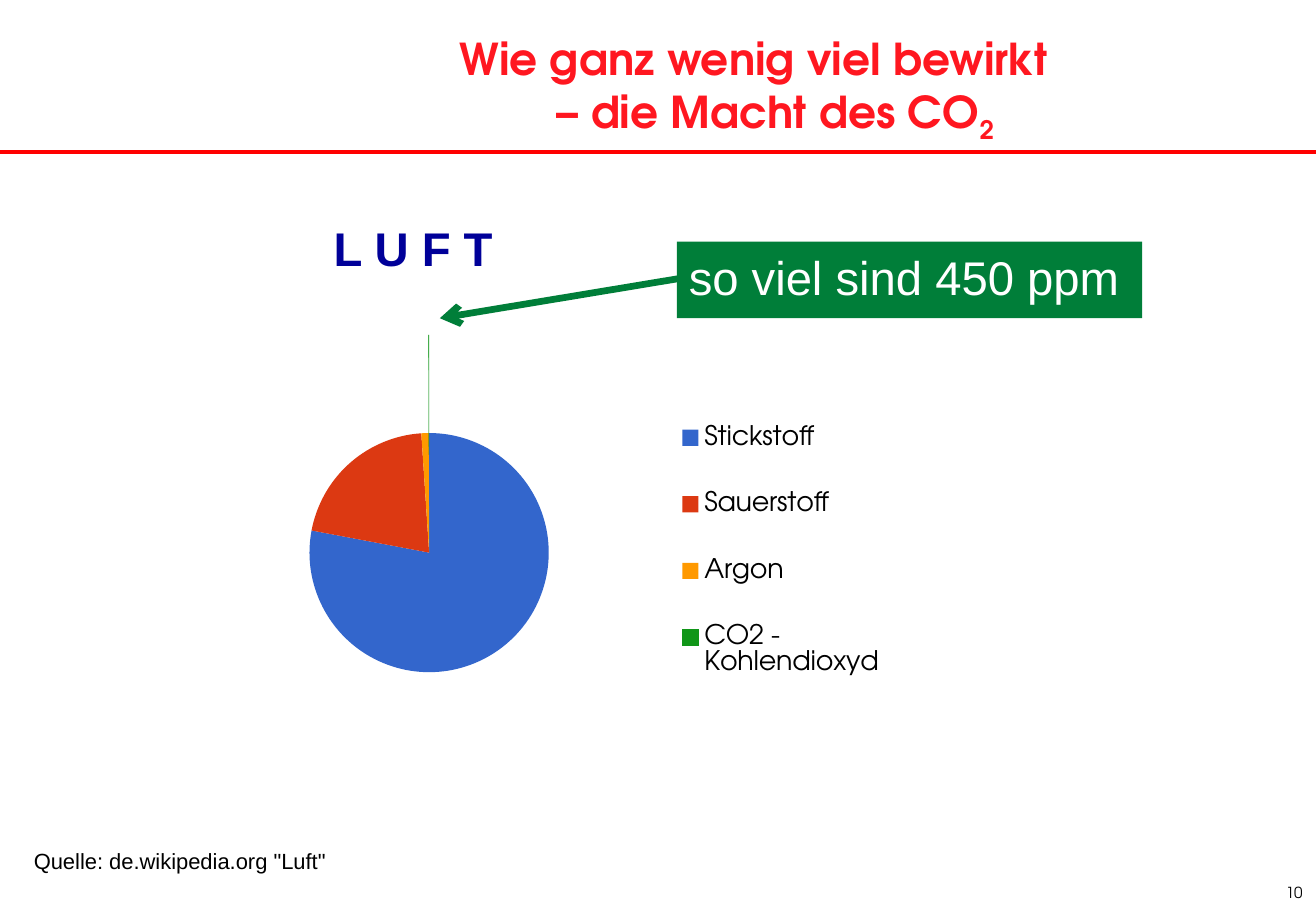
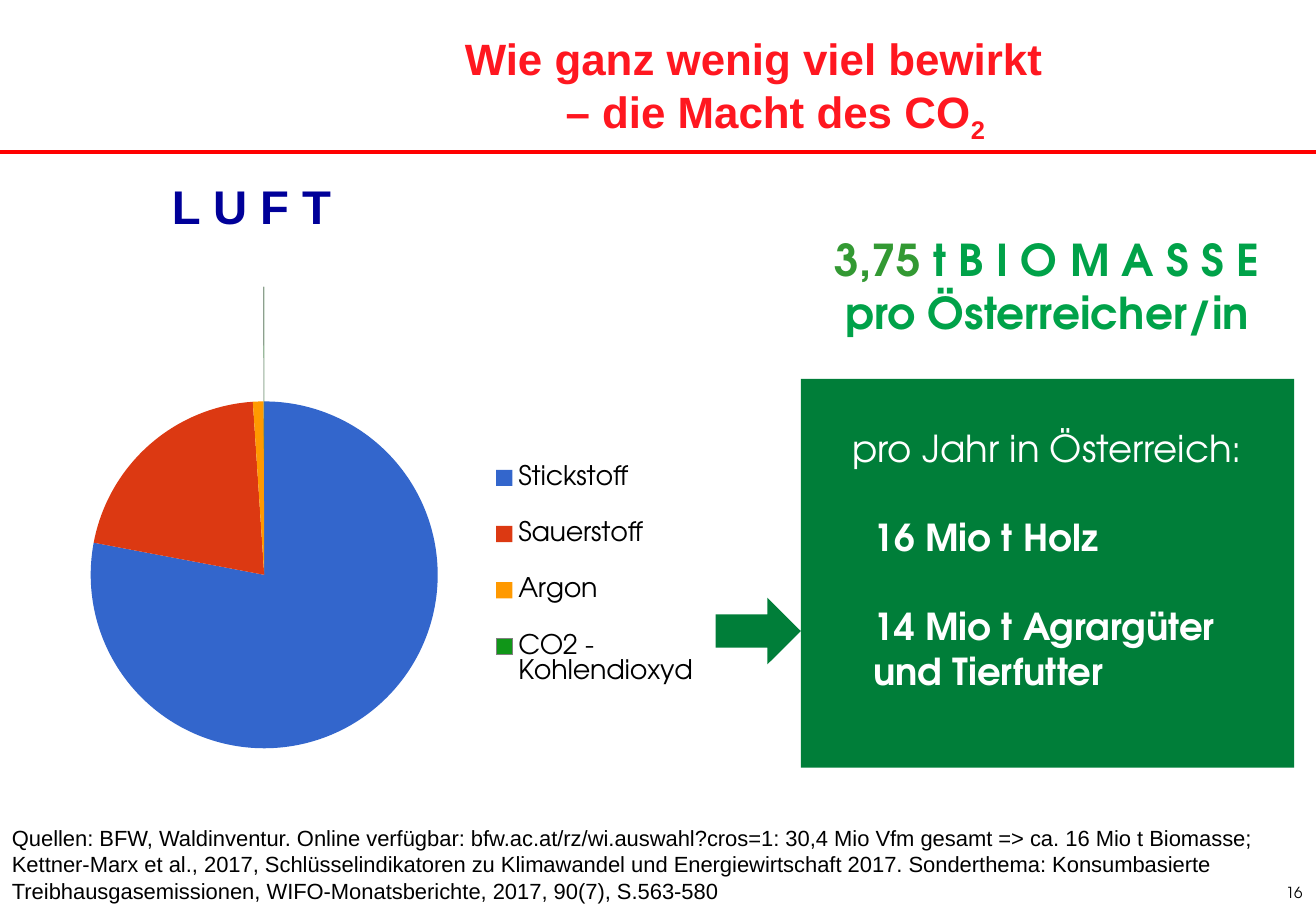
from lxml import etree
from pptx import Presentation
from pptx.chart.data import CategoryChartData
from pptx.dml.color import RGBColor
from pptx.enum.chart import XL_CHART_TYPE, XL_LEGEND_POSITION
from pptx.enum.shapes import MSO_CONNECTOR, MSO_SHAPE
from pptx.enum.text import MSO_ANCHOR, PP_ALIGN
from pptx.oxml import parse_xml
from pptx.oxml.ns import nsdecls, qn
from pptx.util import Inches, Pt

LEFT, CENTER, RIGHT = PP_ALIGN.LEFT, PP_ALIGN.CENTER, PP_ALIGN.RIGHT
TOP, MIDDLE = MSO_ANCHOR.TOP, MSO_ANCHOR.MIDDLE
RECT, RIGHT_ARROW = MSO_SHAPE.RECTANGLE, MSO_SHAPE.RIGHT_ARROW
STRAIGHT = MSO_CONNECTOR.STRAIGHT
PIE, LEGEND_RIGHT = XL_CHART_TYPE.PIE, XL_LEGEND_POSITION.RIGHT

ADVENTOR, ARIAL = "TeX Gyre Adventor", "Arial"
GREEN, RED, TITLE_RED, NAVY = "007E39", "FF0000", "FF1720", "000099"
BLACK, WHITE = "000000", "FFFFFF"
WIDTH, HEIGHT = 10.83, 7.5

TITLE = ["Wie ganz wenig viel bewirkt \v– die Macht des CO", "2"]
CO2_PPM = 450
PPM_PER_PERCENT = 10_000
AIR = [
    ("Stickstoff", 78, "3366CC"),
    ("Sauerstoff", 21, "DC3912"),
    ("Argon", 1, "FF9900"),
    ("CO2 - Kohlendioxyd", CO2_PPM / PPM_PER_PERCENT, "109618"),
]
SLIDES = [
    {
        "number": "10",
        "title_font": ADVENTOR,
        "heading_at": (2.53, 1.76, 1.74, 0.57),
        "pie": {"at": (1.33, 2.62, 6.25, 3.86), "explosion": 82, "tip": "109618",
                "legend": {"x": 0.67, "y": 0.14, "w": 0.29, "h": 0.71}},
        "source_at": (0.18, 6.93, 10.65, 0.32),
        "source": 'Quelle: de.wikipedia.org "Luft"',
    },
    {
        "number": "16",
        "title_font": ARIAL,
        "heading_at": (1.2, 1.41, 1.74, 0.57),
        "pie": {"at": (0, 2.34, 6.04, 3.86), "explosion": 66, "tip": "808080",
                "legend": {"x": 0.66, "y": 0.32, "w": 0.3, "h": 0.6},
                "plot": {"x": 0.12, "y": 0.25, "w": 0.48, "h": 0.74}},
        "source_at": (0, 6.74, 10.83, 0.77),
        "source": "Quellen: BFW, Waldinventur. Online verfügbar: "
                  "bfw.ac.at/rz/wi.auswahl?cros=1: 30,4 Mio Vfm gesamt => ca. 16 Mio t Biomasse; "
                  "Kettner-Marx et al., 2017, Schlüsselindikatoren zu Klimawandel und "
                  "Energiewirtschaft 2017. Sonderthema: Konsumbasierte Treibhausgasemissionen, "
                  "WIFO-Monatsberichte, 2017, 90(7), S.563-580",
    },
]
BIOMASS = [
    [("3,75 ", {"color": "339933"}), ("t B I O M A S S E", {})],
    [("pro Österreicher/in", {})],
]
YEARLY = [
    [("pro Jahr in Österreich:", {})],
    [("16 Mio t Holz", {"bold": True})],
    [("14 Mio t Agrargüter\vund Tierfutter", {"bold": True})],
]


def rgb(value):
    return RGBColor.from_string(value)


def box(at):
    return [Inches(value) for value in at]


def set_font(font, color=BLACK, **values):
    font.color.rgb = rgb(color)
    for name, value in values.items():
        setattr(font, name, value)


def write(frame, paragraphs, align=LEFT, anchor=TOP, inset=(0.1, 0.05, 0.1, 0.05), **style):
    sides = ("margin_left", "margin_top", "margin_right", "margin_bottom")
    values = dict(zip(sides, box(inset)), word_wrap=True, vertical_anchor=anchor)
    for name, value in values.items():
        setattr(frame, name, value)
    for index, runs in enumerate(paragraphs):
        paragraph = frame.paragraphs[0] if index == 0 else frame.add_paragraph()
        paragraph.alignment = align
        for text, changes in runs:
            for part, line in enumerate(text.split("\v")):
                if part:
                    paragraph.add_line_break()
                run = paragraph.add_run()
                run.text = line
                set_font(run.font, **{**style, **changes})
    return frame.paragraphs


def add_text(slide, at, paragraphs, **style):
    return write(slide.shapes.add_textbox(*box(at)).text_frame, paragraphs, **style)


def add_block(slide, kind, at):
    block = slide.shapes.add_shape(kind, *box(at))
    block.shadow.inherit = False
    block.fill.solid()
    block.fill.fore_color.rgb = rgb(GREEN)
    block.line.fill.background()
    return block


def add_line(slide, start, end, color, width, arrow=False):
    line = slide.shapes.add_connector(STRAIGHT, *box(start + end))
    line.line.color.rgb = rgb(color)
    line.line.width = Pt(width)
    if arrow:
        etree.SubElement(line.line._get_or_add_ln(), qn("a:tailEnd"), type="arrow")
    etree.SubElement(line._element.spPr, qn("a:effectLst"))
    return line


def set_title(slide, face):
    title = slide.shapes.title
    title.left, title.top, title.width, title.height = box((1.67, 0.31, 9.17, 0.94))
    main, subscript = TITLE
    paragraph = write(title.text_frame, [[(main, {}), (subscript, {})]], align=CENTER,
                      inset=(0, 0, 0, 0), name=face, size=Pt(26),
                      bold=True, color=TITLE_RED)[0]
    paragraph.line_spacing = 0.9
    paragraph.space_before = Pt(0)
    properties = paragraph._p.get_or_add_pPr()
    properties.set("marL", str(Inches(0.25)))
    properties.set("indent", str(Inches(-0.25)))
    paragraph.runs[-1]._r.get_or_add_rPr().set("baseline", "-25000")


def manual_layout(sizes, target=""):
    values = "".join(f'<c:{name} val="{value}"/>' for name, value in sizes.items())
    return parse_xml(
        f'<c:layout {nsdecls("c")}><c:manualLayout>{target}'
        f'<c:xMode val="edge"/><c:yMode val="edge"/>{values}</c:manualLayout></c:layout>')


def add_pie(slide, at, explosion, tip, legend, plot=None):
    names, shares, colors = zip(*AIR)
    data = CategoryChartData()
    data.categories = names
    data.add_series("Series 1", shares)
    chart = slide.shapes.add_chart(PIE, *box(at), data).chart
    chart.has_title = False
    chart.has_legend = True
    chart.legend.position = LEGEND_RIGHT
    chart.legend.include_in_layout = False
    set_font(chart.font, name=ADVENTOR, size=Pt(10))
    set_font(chart.legend.font, name=ADVENTOR, size=Pt(16))
    legend_xml = chart.legend._element
    for old in legend_xml.findall(qn("c:layout")):
        legend_xml.remove(old)
    legend_xml.find(qn("c:legendPos")).addnext(manual_layout(legend))
    pie = chart.plots[0]
    pie.vary_by_categories = True
    for index, color in enumerate(colors):
        point = pie.series[0].points[index]
        point.format.fill.solid()
        point.format.fill.fore_color.rgb = rgb(color)
        point.format.line.fill.background()
    point.format.line.color.rgb = rgb(tip)
    point.format.line.width = Pt(0.25)
    slice_xml = pie.series[0]._element.findall(qn("c:dPt"))[-1]
    slice_xml.find(qn("c:spPr")).addprevious(
        parse_xml(f'<c:explosion {nsdecls("c")} val="{explosion}"/>'))
    if plot:
        area = chart._chartSpace.chart.plotArea
        for old in area.findall(qn("c:layout")):
            area.remove(old)
        area.insert(0, manual_layout(plot, '<c:layoutTarget val="inner"/>'))


def add_air_slide(deck, layout, content):
    slide = deck.slides.add_slide(layout)
    set_title(slide, content["title_font"])
    add_pie(slide, **content["pie"])
    add_text(slide, content["heading_at"], [[("L U F T", {})]], align=CENTER,
             name=ARIAL, size=Pt(28), bold=True, color=NAVY)
    add_text(slide, content["source_at"], [[(content["source"], {})]],
             name=ARIAL, size=Pt(13))
    add_text(slide, (10.1, 7.27, 0.62, 0.15), [[(content["number"], {})]], align=RIGHT,
             inset=(0, 0, 0, 0), name=ADVENTOR, size=Pt(9))
    return slide


def add_callout(slide):
    add_line(slide, (5.73, 2.27), (3.62, 2.62), GREEN, 4, arrow=True)
    callout = add_block(slide, RECT, (5.57, 1.99, 3.83, 0.63))
    write(callout.text_frame, [[("so viel sind 450 ppm", {})]], anchor=MIDDLE,
          inset=(0.1, 0.05, 0.1, 0.1), name=ARIAL, size=Pt(28), color=WHITE)


def add_biomass(slide):
    add_block(slide, RIGHT_ARROW, (5.89, 4.92, 0.7, 0.55))
    add_text(slide, (6.51, 1.87, 4.22, 0.98), BIOMASS, align=CENTER,
             name=ADVENTOR, size=Pt(26), bold=True, color="00A249")
    panel = add_block(slide, RECT, (6.59, 3.12, 4.06, 3.2))
    heading, *amounts = write(panel.text_frame, YEARLY, inset=(0.1, 0.38, 0.1, 0.05),
                              name=ADVENTOR, size=Pt(22), color=WHITE)
    heading.alignment = CENTER
    for amount in amounts:
        amount.space_before = Pt(26.5)
        amount._p.get_or_add_pPr().set("marL", str(Inches(0.5)))


def main():
    deck = Presentation()
    deck.slide_width, deck.slide_height = box((WIDTH, HEIGHT))
    layout = deck.slide_layouts[5]
    share_slide, biomass_slide = [add_air_slide(deck, layout, content) for content in SLIDES]
    rule = add_line(share_slide, (0, 1.25), (WIDTH, 1.25), RED, 2.25)
    layout.shapes._spTree.append(rule._element)
    add_callout(share_slide)
    add_biomass(biomass_slide)
    deck.save("out.pptx")


if __name__ == "__main__":
    main()
